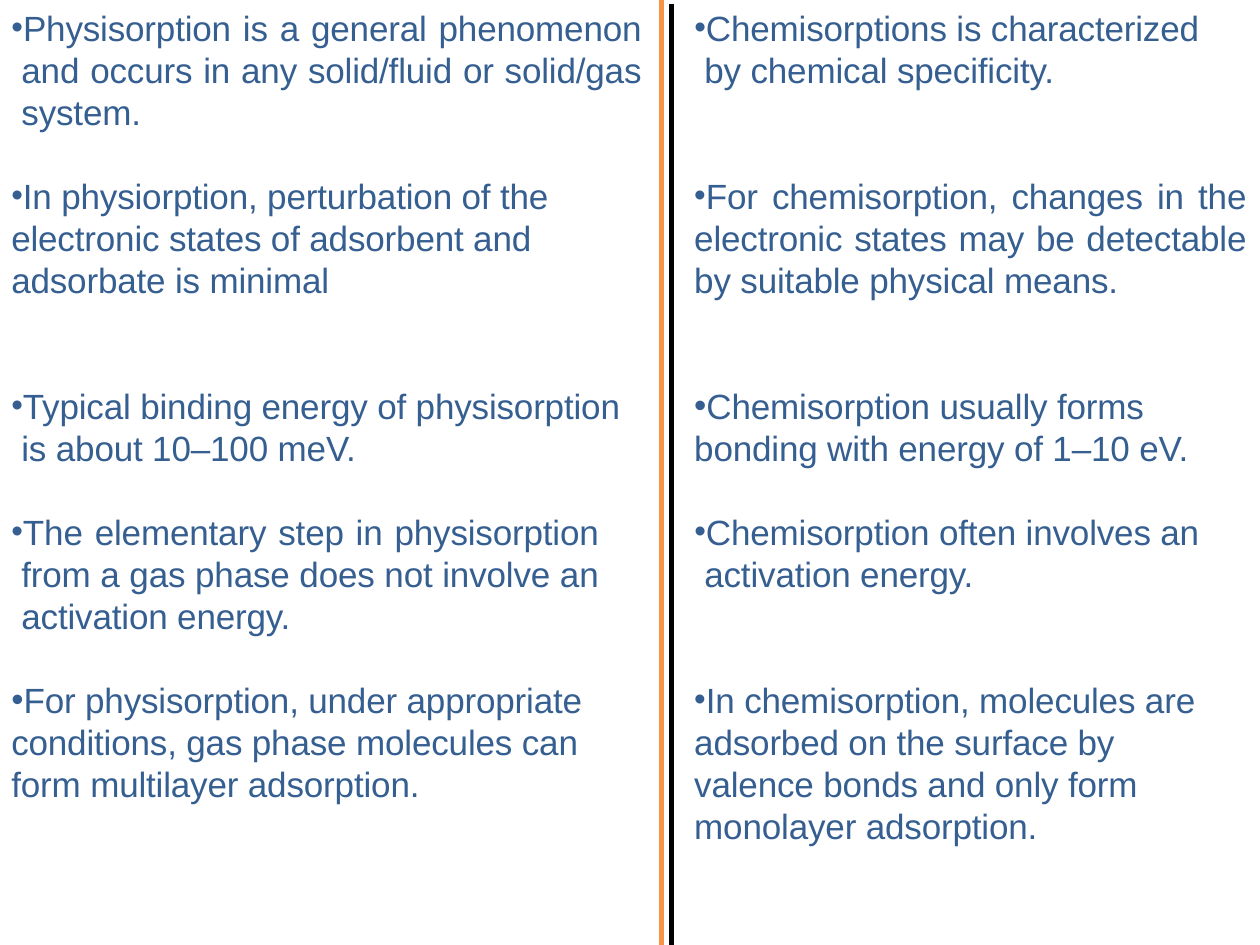
from lxml.etree import SubElement
from pptx import Presentation
from pptx.dml.color import RGBColor
from pptx.enum.shapes import MSO_CONNECTOR
from pptx.enum.text import PP_ALIGN
from pptx.oxml.ns import qn
from pptx.util import Inches, Pt


def color(value):
    return RGBColor.from_string(value)


def add_bullet(paragraph, hanging, size):
    properties = paragraph._p.get_or_add_pPr()
    properties.set("marL", str(Inches(0.09 if hanging else 0.01)))
    properties.set("indent", str(Inches(-0.08 if hanging else 0)))
    SubElement(properties, qn("a:buSzPct"), val=str(size * 1000))
    SubElement(properties, qn("a:buFont"), typeface="Arial")
    SubElement(properties, qn("a:buChar"), char="•")


LEFT, JUSTIFY = PP_ALIGN.LEFT, PP_ALIGN.JUSTIFY
TOP = 0.04
ROW = 1 / 3
PHYSISORPTION, CHEMISORPTION = 0.08, 5.5

statements = [
    (PHYSISORPTION, 0, 5.01, 3, JUSTIFY, True, 95,
     "Physisorption is a general phenomenon and occurs in any solid/fluid or solid/gas system."),
    (PHYSISORPTION, 4, 4.34, 3, LEFT, False, 95,
     "In physiorption, perturbation of the electronic states of adsorbent and adsorbate is minimal"),
    (PHYSISORPTION, 9, 4.93, 2, LEFT, True, 95,
     "Typical binding energy of physisorption is about 10–100 meV."),
    (PHYSISORPTION, 12, 4.67, 3, JUSTIFY, True, 95,
     "The elementary step in physisorption from a gas phase does not involve an activation energy."),
    (PHYSISORPTION, 16, 4.69, 3, LEFT, False, 100,
     "For physisorption, under appropriate conditions, gas phase molecules can form multilayer adsorption."),
    (CHEMISORPTION, 0, 4.09, 2, LEFT, True, 95,
     "Chemisorptions is characterized by chemical specificity."),
    (CHEMISORPTION, 4, 4.39, 3, JUSTIFY, False, 95,
     "For chemisorption, changes in the electronic states may be detectable by suitable physical means."),
    (CHEMISORPTION, 9, 4.01, 2, LEFT, False, 100,
     "Chemisorption usually forms bonding with energy of 1–10 eV."),
    (CHEMISORPTION, 12, 4.08, 2, LEFT, True, 95,
     "Chemisorption often involves an activation energy."),
    (CHEMISORPTION, 16, 4.05, 4, LEFT, False, 95,
     "In chemisorption, molecules are adsorbed on the surface by valence bonds and only form monolayer adsorption."),
]

presentation = Presentation()
presentation.slide_width = Inches(10)
presentation.slide_height = Inches(7.5)
slide = presentation.slides.add_slide(presentation.slide_layouts[6])

for left, row, width, lines, alignment, hanging, bullet_size, text in statements:
    shape = slide.shapes.add_textbox(
        Inches(left), Inches(TOP + row * ROW), Inches(width), Inches(lines * ROW + 0.03))
    frame = shape.text_frame
    frame.word_wrap = True
    frame.margin_left = frame.margin_right = frame.margin_bottom = 0
    frame.margin_top = Inches(0.01)
    paragraph = frame.paragraphs[0]
    paragraph.alignment = alignment
    paragraph.space_before = Pt(1)
    add_bullet(paragraph, hanging, bullet_size)
    paragraph.font.name = "Arial"
    paragraph.font.size = Pt(20)
    paragraph.font.color.rgb = color("365F91")
    run = paragraph.add_run()
    run.text = text
    run._r.get_or_add_rPr().set("spc", "-10")

for left, top, line_color in [(5.33, 0.03, "000000"), (5.25, 0, "F69545")]:
    divider = slide.shapes.add_connector(
        MSO_CONNECTOR.STRAIGHT, Inches(left), Inches(top), Inches(left), presentation.slide_height)
    divider.line.color.rgb = color(line_color)
    divider.line.width = Pt(3)
    SubElement(divider._element.spPr, qn("a:effectLst"))

presentation.save("out.pptx")
